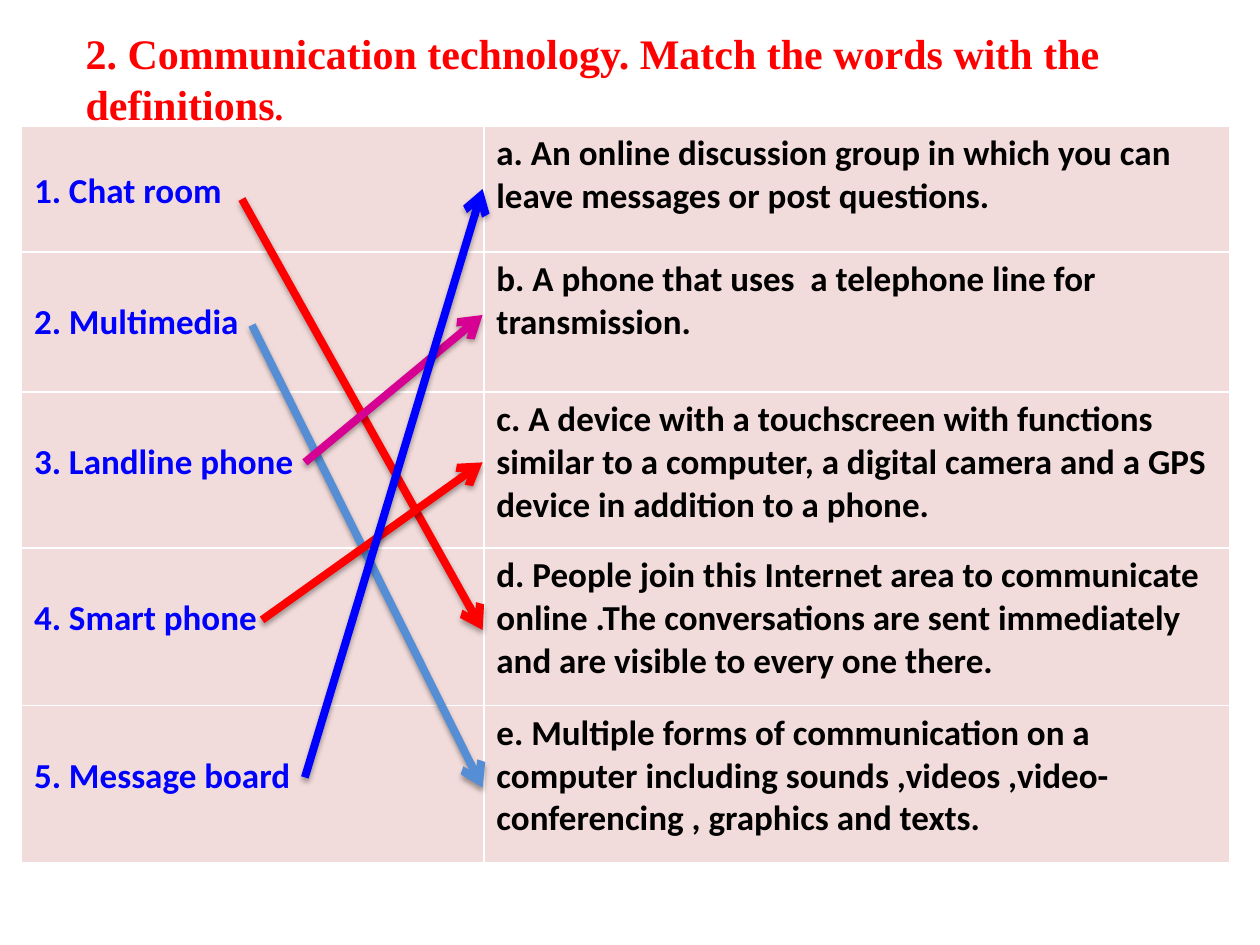
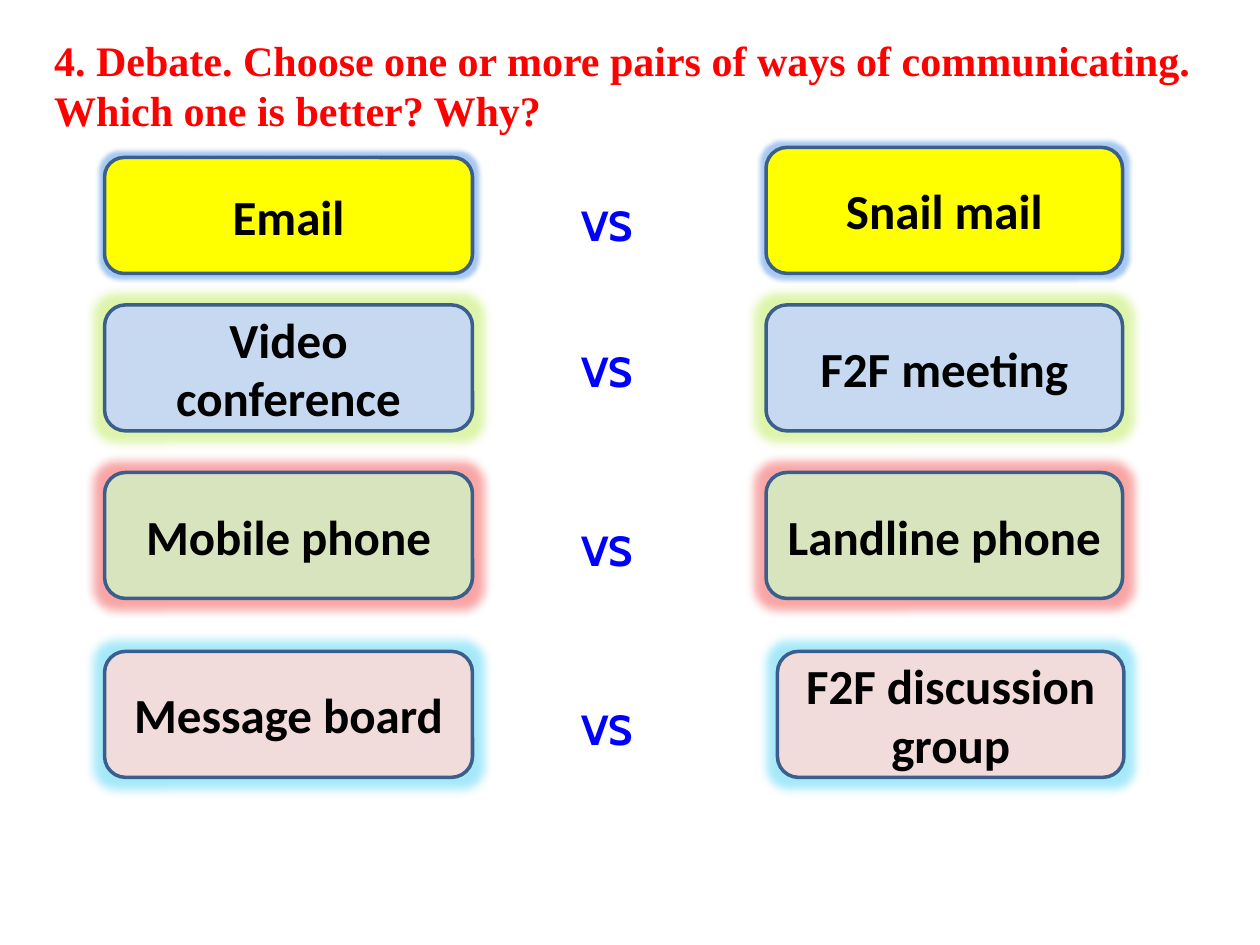
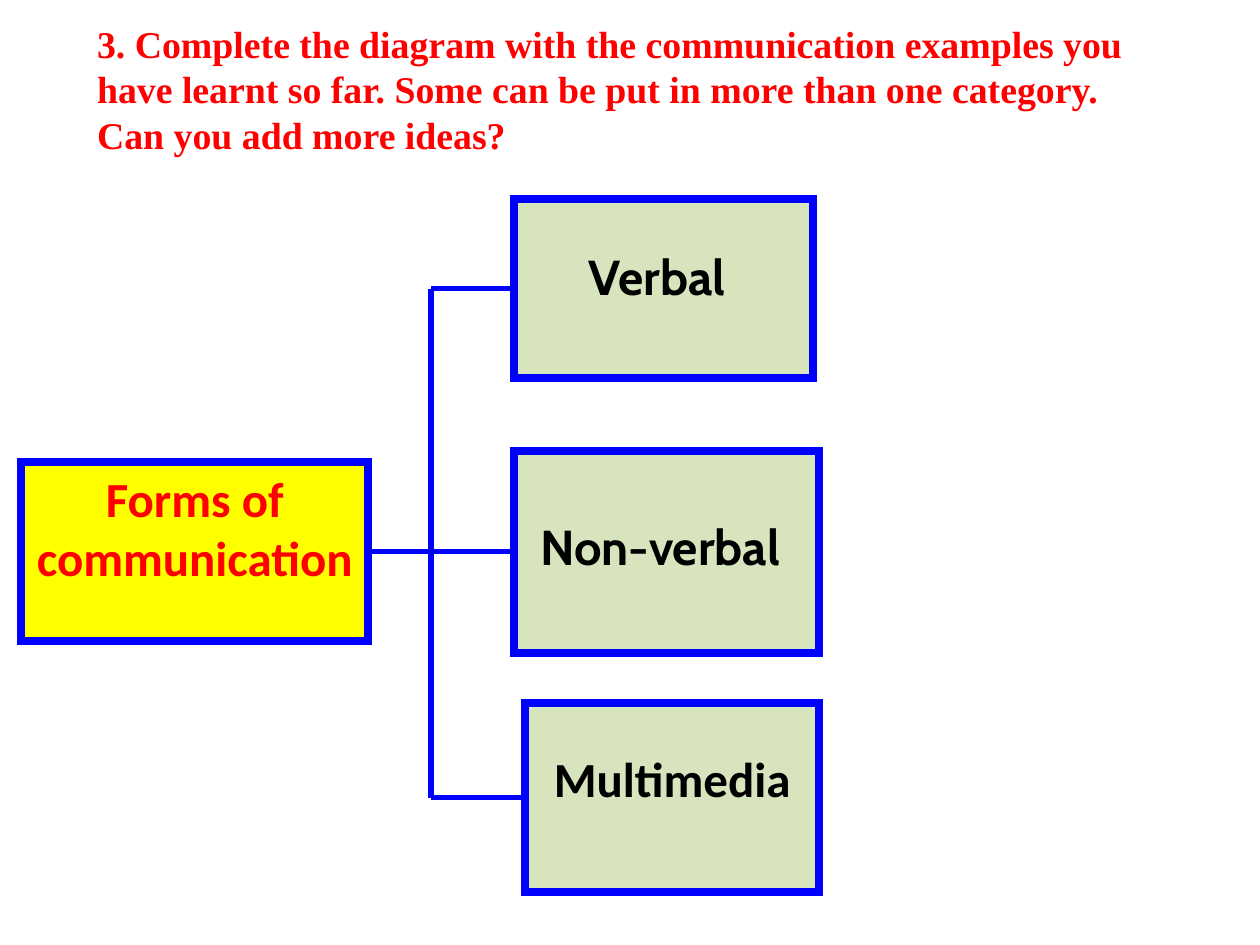
from dataclasses import dataclass

from lxml import etree
from pptx import Presentation, util as u
from pptx.dml.color import RGBColor
from pptx.enum import shapes, text
from pptx.oxml import ns


@dataclass(frozen=True)
class Theme:
    red: str = "FF0000"
    blue: str = "0000FF"
    sky: str = "558ED5"
    magenta: str = "D60093"
    black: str = "000000"
    white: str = "FFFFFF"
    yellow: str = "FFFF00"
    pale_blue: str = "C6D9F1"
    pale_green: str = "D7E4BD"
    pale_pink: str = "F2DCDB"
    outline: str = "3A5F8C"
    glow_blue: str = "2277DD"
    glow_green: str = "AAE42B"
    glow_red: str = "F02020"
    glow_cyan: str = "20C8F2"
    title_font: str = "Times New Roman"
    body_font: str = "Calibri"
    accent_font: str = "Cabin"
    title_size: float = 24
    long_title_size: float = 21.6
    table_size: float = 20
    versus_size: float = 24
    box_size: float = 28
    thick_line: float = 4.5
    branch_line: float = 3
    thin_line: float = 2


def color(value):
    return RGBColor.from_string(value)


def add_effect(parent, name, tint, alpha, **attributes):
    """Append one colour effect to an effect list."""
    effect = etree.SubElement(parent, ns.qn(f"a:{name}"), attributes)
    shade = etree.SubElement(effect, ns.qn("a:srgbClr"), val=tint)
    etree.SubElement(shade, ns.qn("a:alpha"), val=str(alpha * 1000))


class SlideBuilder:
    def __init__(self, deck, theme):
        self.deck = deck
        self.theme = theme
        self.slide = None

    def new_slide(self):
        self.slide = self.deck.slides.add_slide(self.deck.slide_layouts[5])

    def style(self, span, size, tint, font):
        span.font.size = u.Pt(size)
        span.font.bold = True
        span.font.name = font
        span.font.color.rgb = color(tint)

    def fill_text(self, frame, words, size, tint, font, align):
        frame.text = words
        for para in frame.paragraphs:
            para.alignment = align
            for span in para.runs:
                self.style(span, size, tint, font)

    def place(self, item, left, top, width, height):
        item.left, item.top = u.Inches(left), u.Inches(top)
        item.width, item.height = u.Inches(width), u.Inches(height)

    def title(self, words, area, size=None, anchor=text.MSO_ANCHOR.MIDDLE):
        title = self.slide.shapes.title
        self.place(title, *area)
        frame = title.text_frame
        frame.word_wrap = True
        frame.auto_size = text.MSO_AUTO_SIZE.NONE
        frame.vertical_anchor = anchor
        self.fill_text(frame, words, size or self.theme.title_size, self.theme.red,
                       self.theme.title_font, text.PP_ALIGN.LEFT)
        return frame.paragraphs[0]

    def box(self, words, area, fill=None, line=None, line_width=None, size=None,
            tint=None, font=None, rounded=False, top_inset=None,
            right_inset=0.1, glow=None):
        theme = self.theme
        kind = shapes.MSO_SHAPE.ROUNDED_RECTANGLE if rounded else shapes.MSO_SHAPE.RECTANGLE
        box = self.slide.shapes.add_shape(kind, *(u.Inches(n) for n in area))
        box.shadow.inherit = False
        if fill:
            box.fill.solid()
            box.fill.fore_color.rgb = color(fill)
        else:
            box.fill.background()
        box.line.color.rgb = color(line or theme.blue)
        box.line.width = u.Pt(line_width or theme.thick_line)
        if not rounded:
            etree.SubElement(box.line._get_or_add_ln(), ns.qn("a:miter"), lim="800000")
        frame = box.text_frame
        frame.word_wrap = True
        frame.margin_right = u.Inches(right_inset)
        # A top inset pins the text to the top; otherwise it is centred
        frame.vertical_anchor = text.MSO_ANCHOR.MIDDLE
        if top_inset is not None:
            frame.vertical_anchor = text.MSO_ANCHOR.TOP
            frame.margin_top = u.Inches(top_inset)
        self.fill_text(frame, words, size or theme.box_size, tint or theme.black,
                       font or theme.body_font, text.PP_ALIGN.CENTER)
        if glow:
            glow_color, radius = glow
            effects = box._element.spPr.find(ns.qn("a:effectLst"))
            add_effect(effects, "glow", glow_color, 40, rad=str(u.Pt(radius)))
        return box

    def line(self, start, end, tint, width, arrow=False):
        line = self.slide.shapes.add_connector(
            shapes.MSO_CONNECTOR.STRAIGHT, *(u.Inches(n) for n in (*start, *end)))
        line.line.color.rgb = color(tint)
        line.line.width = u.Pt(width)
        effects = etree.SubElement(line._element.spPr, ns.qn("a:effectLst"))
        if arrow:
            etree.SubElement(line.line._get_or_add_ln(), ns.qn("a:tailEnd"), type="arrow")
            add_effect(effects, "outerShdw", self.theme.black, 35,
                       blurRad=str(u.Pt(3.1)), dist=str(u.Pt(1.8)),
                       dir="5400000", rotWithShape="0")
        return line

    def table(self, rows, left, top, widths, heights, insets):
        theme = self.theme
        frame = self.slide.shapes.add_table(
            len(rows), len(widths), u.Inches(left), u.Inches(top),
            u.Inches(sum(widths)), u.Inches(sum(heights)))
        table = frame.table
        for column, width in zip(table.columns, widths):
            column.width = u.Inches(width)
        for row, height, words, inset in zip(table.rows, heights, rows, insets):
            row.height = u.Inches(height)
            row.cells[0].margin_top = u.Inches(inset)
            for cell, content, tint in zip(row.cells, words, (theme.blue, theme.black)):
                cell.fill.solid()
                cell.fill.fore_color.rgb = color(theme.pale_pink)
                self.fill_text(cell.text_frame, content, theme.table_size, tint,
                               theme.body_font, text.PP_ALIGN.LEFT)


def matching_slide(page):
    theme = page.theme
    page.new_slide()
    para = page.title("2. Communication technology. Match the words with the definitions",
                      (0.58, 0.17, 9.08, 0.91), anchor=text.MSO_ANCHOR.TOP)
    stop = para.add_run()
    stop.text = "."
    page.style(stop, 20, theme.red, theme.title_font)

    # Words and definitions
    pairs = [
        ("1. Chat room",
         "a. An online discussion group in which you can leave messages or post questions."),
        ("2. Multimedia",
         "b. A phone that uses  a telephone line for transmission."),
        ("3. Landline phone",
         "c. A device with a touchscreen with functions similar to a computer, "
         "a digital camera and a GPS device in addition to a phone."),
        ("4. Smart phone",
         "d. People join this Internet area to communicate online .The conversations "
         "are sent immediately and are visible to every one there."),
        ("5. Message board",
         "e. Multiple forms of communication on a computer including sounds ,videos "
         ",video-conferencing , graphics and texts."),
    ]
    page.table(pairs, 0.17, 1, (3.67, 5.92), (1, 1.11, 1.24, 1.25, 1.25),
               (0.35, 0.39, 0.39, 0.39, 0.39))

    # Arrows from each word to its definition
    answers = [
        (1.92, 1.58, 5, theme.red),
        (2, 2.58, 6.25, theme.sky),
        (2.42, 3.67, 2.5, theme.magenta),
        (2.08, 4.92, 3.67, theme.red),
        (2.42, 6.17, 1.5, theme.blue),
    ]
    for word_x, word_y, definition_y, tint in answers:
        page.line((word_x, word_y), (3.83, definition_y), tint, theme.thick_line, arrow=True)


def debate_slide(page):
    theme = page.theme
    page.new_slide()
    page.title("4. Debate. Choose one or more pairs of ways of communicating. "
               "Which one is better? Why?", (0.33, 0.17, 9.67, 1))

    # Each side: words, left, top, width; then the shared bottom and colours
    debates = [
        (("Email", 0.83, 1.25, 2.92), ("Snail mail", 6.08, 1.17, 2.83),
         2.17, 1.42, theme.yellow, (theme.glow_blue, 5)),
        (("Video conference", 0.83, 2.42, 2.92), ("F2F meeting", 6.08, 2.42, 2.83),
         3.42, 2.58, theme.pale_blue, (theme.glow_green, 11)),
        (("Mobile phone", 0.83, 3.75, 2.92), ("Landline phone", 6.08, 3.75, 2.83),
         4.75, 4, theme.pale_green, (theme.glow_red, 11)),
        (("Message board", 0.83, 5.17, 2.92), ("F2F discussion group", 6.17, 5.17, 2.75),
         6.17, 5.42, theme.pale_pink, (theme.glow_cyan, 11)),
    ]
    for first, second, bottom, versus_top, fill, glow in debates:
        page.box("VS", (4.33, versus_top, 1.08, 0.5), line=theme.white,
                 size=theme.versus_size, tint=theme.blue, font=theme.accent_font,
                 top_inset=0.16, right_inset=0.2)
        for words, left, top, width in (first, second):
            page.box(words, (left, top, width, bottom - top), fill=fill,
                     line=theme.outline, line_width=theme.thin_line,
                     rounded=True, glow=glow)


def diagram_slide(page):
    theme = page.theme
    page.new_slide()
    page.title("3. Complete the diagram with the communication examples you have learnt "
               "so far. Some can be put in more than one category. \vCan you add more ideas?",
               (0.67, 0.08, 8.92, 1.25), size=theme.long_title_size)

    # Root and categories
    root = page.box("Forms of communication", (0.17, 3.67, 2.75, 1.42),
                    fill=theme.yellow, tint=theme.red, top_inset=0.05)
    categories = [
        ("Verbal", (4.08, 1.58, 2.37, 1.42), theme.accent_font, 0.38, 0.2),
        ("Non-verbal", (4.08, 3.58, 2.42, 1.6), theme.accent_font, 0.52, 0.2),
        ("Multimedia", (4.17, 5.58, 2.33, 1.5), theme.body_font, 0.36, 0.1),
    ]
    boxes = [page.box(words, area, fill=theme.pale_green, font=font,
                      top_inset=top_inset, right_inset=right_inset)
             for words, area, font, top_inset, right_inset in categories]

    # Spine with one branch to each category; the middle one starts at the root
    spine_x = 3.42
    middles = [area[1] + area[3] / 2 for _, area, *_ in categories]
    page.line((spine_x, middles[0]), (spine_x, middles[-1]), theme.blue, theme.branch_line)
    for box, middle in zip(boxes, middles):
        branch = page.line((spine_x, middle), (box.left.inches, middle),
                           theme.blue, theme.branch_line)
        if box is boxes[1]:
            branch.begin_connect(root, 3)
        branch.end_connect(box, 1)


def main():
    deck = Presentation()
    deck.slide_width, deck.slide_height = u.Inches(10), u.Inches(7.5)
    page = SlideBuilder(deck, Theme())
    matching_slide(page)
    debate_slide(page)
    diagram_slide(page)
    deck.save("out.pptx")


if __name__ == "__main__":
    main()
